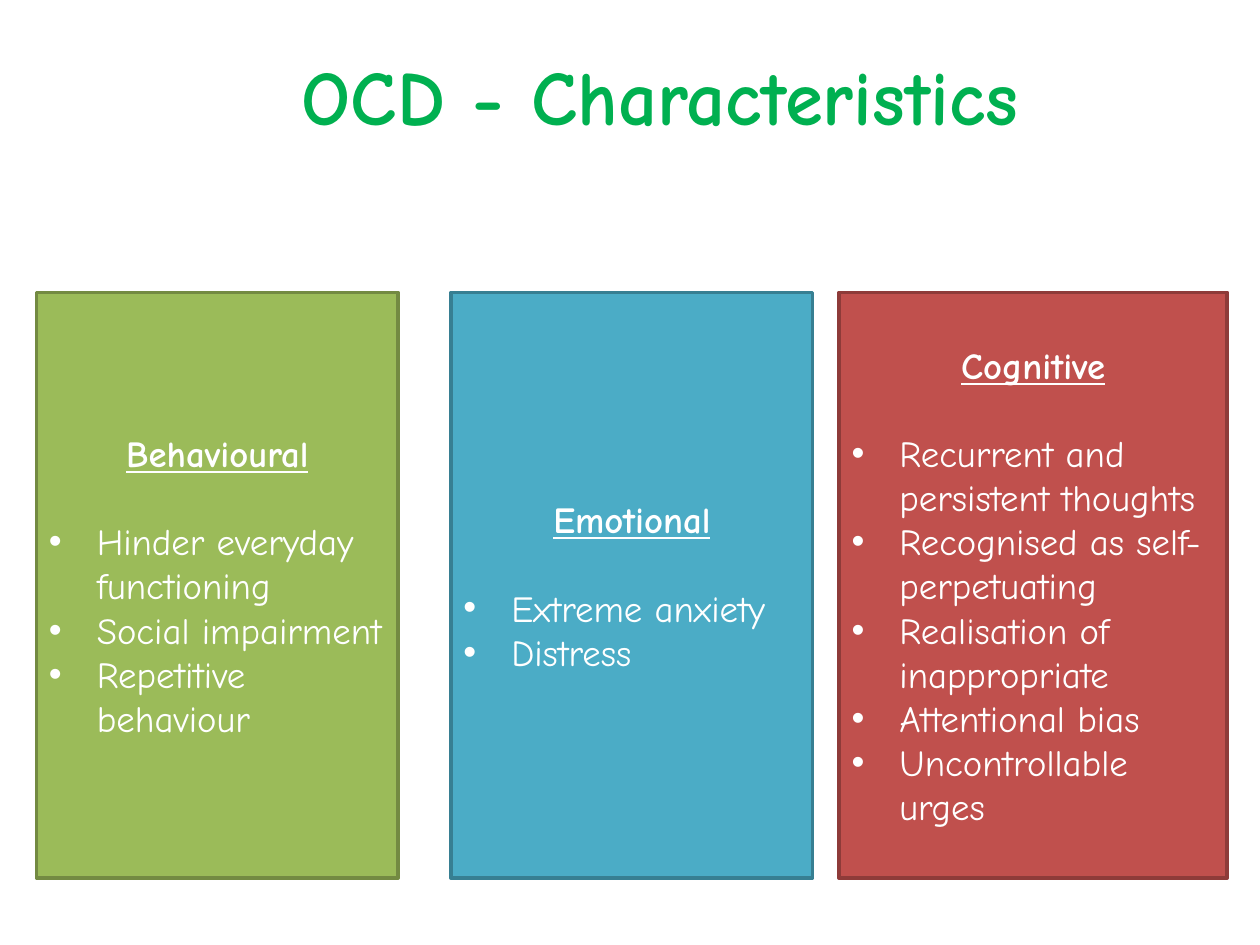
import pptx
import pptx.util
import pptx.dml.color
import pptx.enum.shapes
import pptx.enum.text
import lxml.etree
from pptx.oxml.ns import qn

RGBColor = pptx.dml.color.RGBColor
WHITE = RGBColor(0xFF, 0xFF, 0xFF)
TITLE_GREEN = RGBColor(0x00, 0xB0, 0x50)
GREEN = RGBColor(0x9B, 0xBB, 0x59)
DARK_GREEN = RGBColor(0x73, 0x8A, 0x42)
BLUE = RGBColor(0x4B, 0xAC, 0xC6)
DARK_BLUE = RGBColor(0x37, 0x7F, 0x92)
RED = RGBColor(0xC0, 0x50, 0x4D)
DARK_RED = RGBColor(0x8E, 0x3B, 0x39)

WIDTH, HEIGHT = 10, 7.5
CARD_TOP, CARD_HEIGHT = 2.32 / HEIGHT, 4.65 / HEIGHT

CARDS = [
    (0.29, 2.87, GREEN, DARK_GREEN, "Behavioural",
     ["Hinder everyday functioning", "Social impairment", "Repetitive behaviour"]),
    (3.58, 2.87, BLUE, DARK_BLUE, "Emotional",
     ["Extreme anxiety", "Distress"]),
    (6.66, 3.08, RED, DARK_RED, "Cognitive",
     ["Recurrent and persistent thoughts", "Recognised as self-perpetuating",
      "Realisation of inappropriate", "Attentional bias", "Uncontrollable urges"]),
]


class SlideBuilder:
    font_name = "Comic Neue"
    body_size = 21
    title_size = 44
    heading_gap = 25.2
    indent = pptx.util.Inches(0.38)

    def __init__(self, deck):
        self.deck = deck
        self.page = deck.slides.add_slide(deck.slide_layouts[6])

    def place(self, left, top, width, height):
        across, down = self.deck.slide_width, self.deck.slide_height
        return (round(left * across), round(top * down),
                round(width * across), round(height * down))

    def set_text(self, para, text, size, color, bold=False, centred=False):
        para.text = text
        para.font.name = self.font_name
        para.font.size = pptx.util.Pt(size)
        para.font.color.rgb = color
        para.font.bold = bold
        align = pptx.enum.text.PP_ALIGN
        para.alignment = align.CENTER if centred else align.LEFT

    def title(self, text, left, top, width, height):
        box = self.page.shapes.add_textbox(*self.place(left, top, width, height))
        frame = box.text_frame
        frame.word_wrap = True
        frame.vertical_anchor = pptx.enum.text.MSO_ANCHOR.MIDDLE
        self.set_text(frame.paragraphs[0], text, self.title_size, TITLE_GREEN, True, True)

    def bullet(self, frame, text):
        para = frame.add_paragraph()
        self.set_text(para, text, self.body_size, WHITE)
        properties = para._p.get_or_add_pPr()
        properties.set("marL", str(self.indent))
        properties.set("indent", str(-self.indent))
        mark_font = lxml.etree.Element(qn("a:buFont"), typeface="Arial")
        mark = lxml.etree.Element(qn("a:buChar"), char="•")
        defaults = properties.find(qn("a:defRPr"))
        defaults.addprevious(mark_font)
        defaults.addprevious(mark)

    def card(self, left, width, fill, outline, heading, points):
        box = self.page.shapes.add_shape(
            pptx.enum.shapes.MSO_SHAPE.RECTANGLE,
            *self.place(left, CARD_TOP, width, CARD_HEIGHT))
        box.shadow.inherit = False
        box.fill.solid()
        box.fill.fore_color.rgb = fill
        box.line.color.rgb = outline
        box.line.width = pptx.util.Pt(2)
        frame = box.text_frame
        frame.word_wrap = True
        frame.vertical_anchor = pptx.enum.text.MSO_ANCHOR.MIDDLE
        para = frame.paragraphs[0]
        self.set_text(para, heading, self.body_size, WHITE, True, True)
        para.font.underline = True
        para.space_after = pptx.util.Pt(self.heading_gap)
        for point in points:
            self.bullet(frame, point)


def main():
    deck = pptx.Presentation()
    deck.slide_width = pptx.util.Inches(WIDTH)
    deck.slide_height = pptx.util.Inches(HEIGHT)
    builder = SlideBuilder(deck)
    for left, width, fill, outline, heading, points in CARDS:
        builder.card(left / WIDTH, width / WIDTH, fill, outline, heading, points)
    builder.title("OCD - Characteristics", 0.74 / WIDTH, 0.13 / HEIGHT, 0.9, 1.25 / HEIGHT)
    deck.save("out.pptx")


if __name__ == "__main__":
    main()
